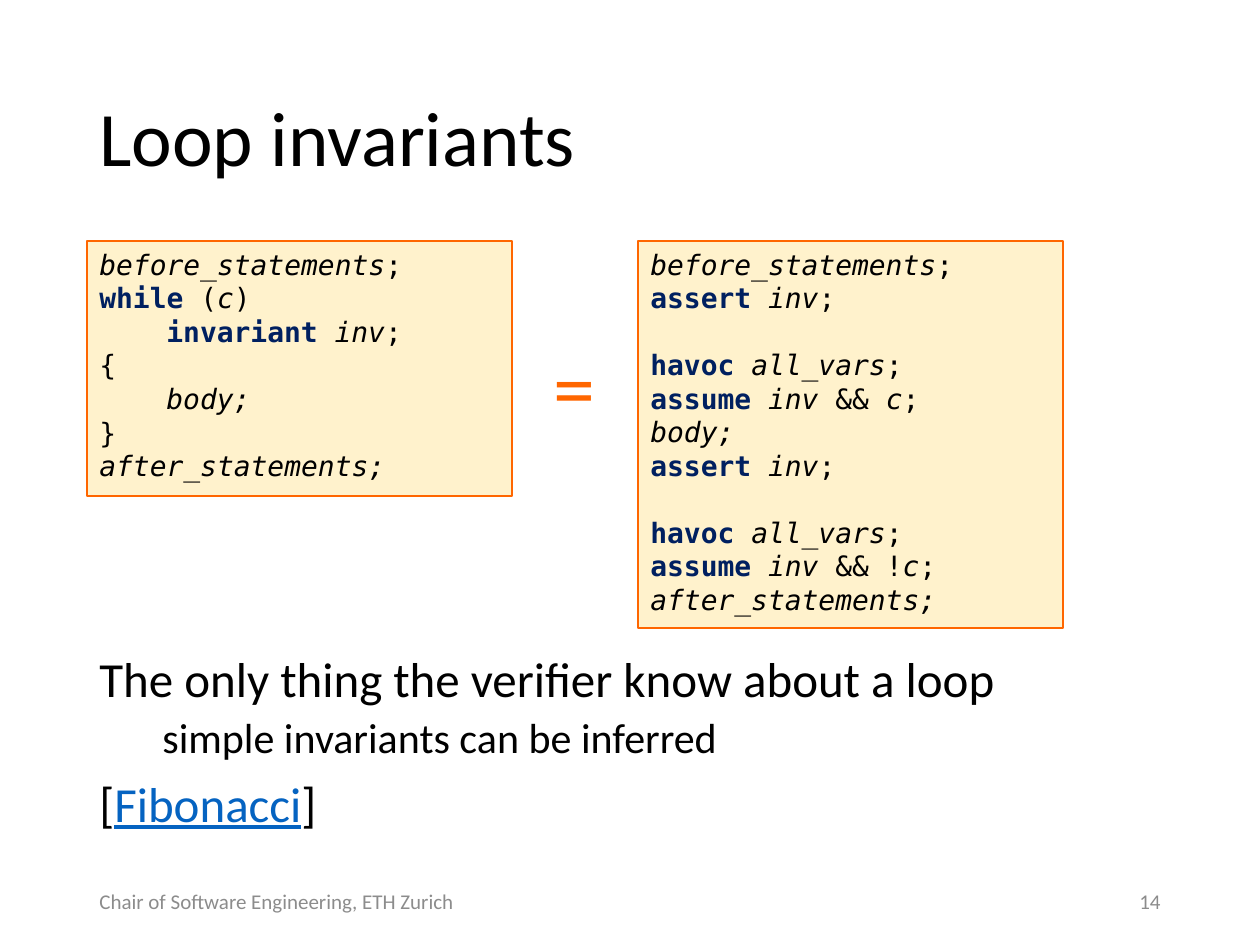
from dataclasses import dataclass

from pptx import Presentation, util as u
from pptx.dml.color import RGBColor
from pptx.enum import shapes, text

PX_PER_INCH = 126


@dataclass(frozen=True)
class Theme:
    sans: str = "Calibri"
    mono: str = "DejaVu Sans Mono"
    ink: str = "000000"
    keyword: str = "002060"
    accent: str = "FF6600"
    code_fill: str = "FFF2CC"
    link: str = "0563C1"
    muted: str = "8C8C8C"
    title: int = 44
    equals: int = 48
    body: int = 28
    detail: int = 24
    code: int = 16
    footer: int = 12


THEME = Theme()
KEY = dict(bold=True, color=THEME.keyword)
VAR = dict(italic=True)
PLAIN = {}
CODE_INDENT = 67
CODE_GAP = 19  # points, one line of code


def px(length):
    return u.Emu(round(length * u.Inches(1) / PX_PER_INCH))


def set_all(target, values):
    for name, value in values.items():
        setattr(target, name, value)


def add_span(para, words, size, color=THEME.ink, name=THEME.sans, **style):
    span = para.add_run()
    span.text = words
    set_all(span.font, dict(size=u.Pt(size), name=name, **style))
    span.font.color.rgb = RGBColor.from_string(color)


def next_para(frame, first, indent=0, **layout):
    para = frame.paragraphs[0] if first else frame.add_paragraph()
    set_all(para, layout)
    if indent:
        properties = para._p.get_or_add_pPr()
        properties.set("marL", str(px(indent)))
        properties.set("indent", "0")
    return para


def add_box(page, place, anchor=text.MSO_ANCHOR.TOP):
    box = page.shapes.add_textbox(*map(px, place))
    set_all(box.text_frame, dict(word_wrap=True, vertical_anchor=anchor))
    return box.text_frame


def add_line(page, place, words, size, color=THEME.ink,
             anchor=text.MSO_ANCHOR.MIDDLE, **layout):
    para = next_para(add_box(page, place, anchor), True, **layout)
    add_span(para, words, size, color)


def add_code(page, place, lines):
    """Each line is (layout, spans); each span is (words, style)."""
    box = page.shapes.add_shape(shapes.MSO_SHAPE.RECTANGLE, *map(px, place))
    box.shadow.inherit = False
    box.fill.solid()
    box.fill.fore_color.rgb = RGBColor.from_string(THEME.code_fill)
    box.line.color.rgb = RGBColor.from_string(THEME.accent)
    box.line.width = u.Pt(1.5)
    frame = box.text_frame
    set_all(frame, dict(word_wrap=True, vertical_anchor=text.MSO_ANCHOR.TOP))
    for number, (layout, spans) in enumerate(lines):
        para = next_para(frame, number == 0,
                         alignment=text.PP_ALIGN.LEFT, **layout)
        for words, style in spans:
            add_span(para, words, THEME.code, name=THEME.mono, **style)


def row(*spans, **layout):
    return layout, spans


def command(keyword, variable, *rest, **layout):
    return row((keyword + " ", KEY), (variable, VAR), *rest, (";", PLAIN),
               **layout)


def add_body(page, place):
    frame = add_box(page, place)
    top = dict(line_spacing=0.9, space_before=u.Pt(10))
    para = next_para(frame, True, **top)
    add_span(para, "The only thing the verifier know about a loop", THEME.body)
    para = next_para(frame, False, indent=63, level=1,
                     line_spacing=0.9, space_before=u.Pt(5))
    add_span(para, "simple invariants can be inferred", THEME.detail)
    para = next_para(frame, False, **top)
    add_span(para, "[", THEME.body)
    add_span(para, "Fibonacci", THEME.body, THEME.link, underline=True)
    add_span(para, "]", THEME.body)


def main():
    deck = Presentation()
    deck.slide_width, deck.slide_height = u.Inches(10), u.Inches(7.5)
    page = deck.slides.add_slide(deck.slide_layouts[6])

    # Title and explanation
    add_line(page, (87, 50, 1086, 183), "Loop invariants", THEME.title,
             line_spacing=0.9)
    add_body(page, (87, 649, 1086, 202))

    # The loop and its translation
    before = row(("before_statements", VAR), (";", PLAIN))
    body, after = ("body;", VAR), row(("after_statements;", VAR))
    check = command("assert", "inv")
    havoc = command("havoc", "all_vars", space_before=u.Pt(CODE_GAP))
    loop = [
        before,
        row(("while ", KEY), ("(", PLAIN), ("c", VAR), (")", PLAIN)),
        command("invariant", "inv", indent=CODE_INDENT),
        row(("{", PLAIN)),
        row(body, indent=CODE_INDENT),
        row(("}", PLAIN)),
        after,
    ]
    translation = [
        before,
        check,
        havoc,
        command("assume", "inv", (" && ", PLAIN), ("c", VAR)),
        row(body),
        check,
        havoc,
        command("assume", "inv", (" && !", PLAIN), ("c", VAR)),
        after,
    ]
    add_code(page, (87, 241, 425, 255), loop)
    add_code(page, (638, 241, 425, 387), translation)
    add_line(page, (541, 328, 68, 115), "=", THEME.equals, THEME.accent,
             text.MSO_ANCHOR.TOP)

    # Footer and page number
    add_line(page, (87, 876, 756, 50),
             "Chair of Software Engineering, ETH Zurich",
             THEME.footer, THEME.muted)
    add_line(page, (890, 876, 283, 50), "14", THEME.footer, THEME.muted,
             alignment=text.PP_ALIGN.RIGHT)

    deck.save("out.pptx")


if __name__ == "__main__":
    main()
